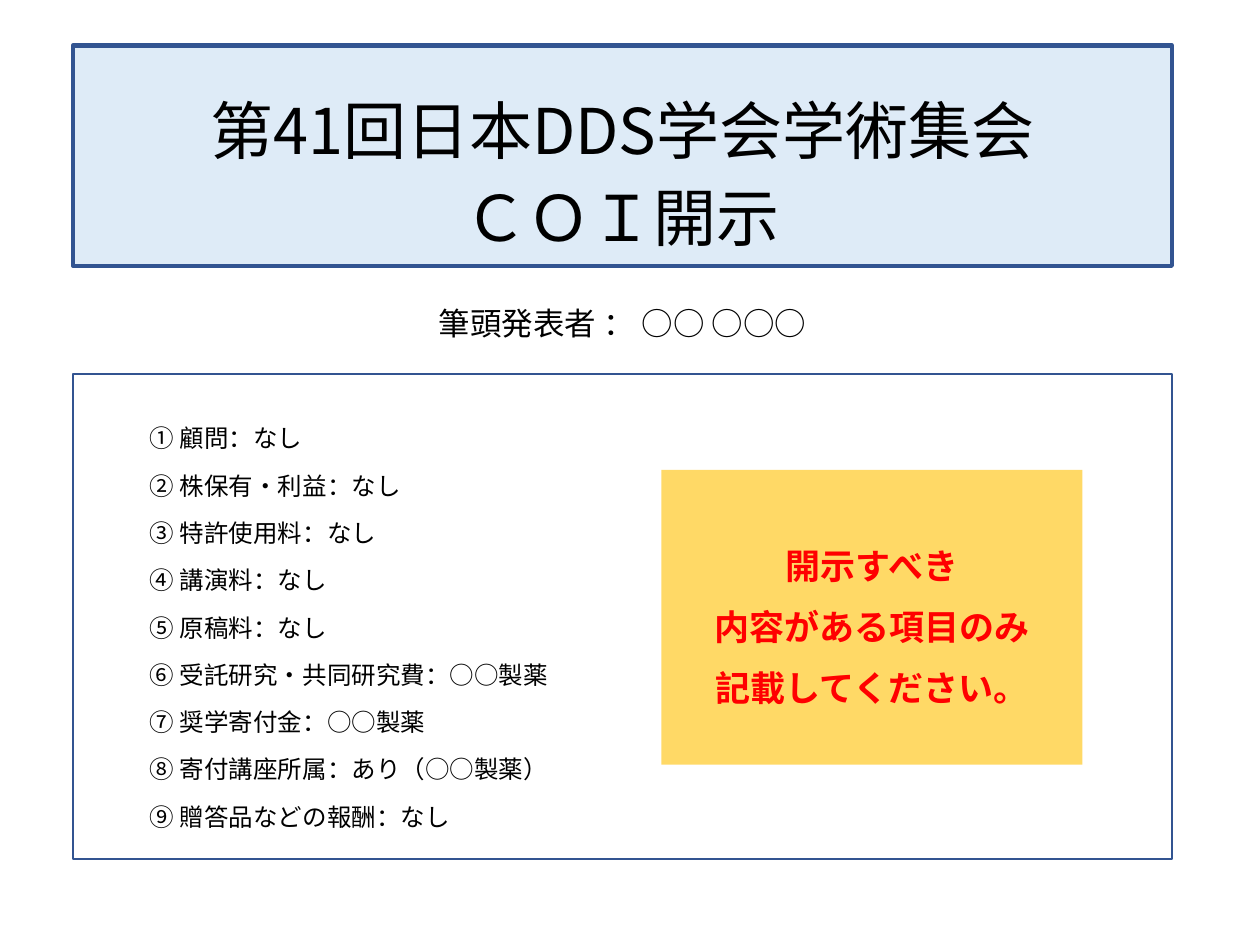
from lxml import etree
from pptx import Presentation
from pptx.dml.color import RGBColor
from pptx.enum.shapes import MSO_SHAPE
from pptx.enum.text import MSO_ANCHOR, MSO_AUTO_SIZE, PP_ALIGN
from pptx.oxml.ns import qn
from pptx.util import Inches, Pt

RECTANGLE = MSO_SHAPE.RECTANGLE
LEFT, CENTER = PP_ALIGN.LEFT, PP_ALIGN.CENTER
TOP, MIDDLE = MSO_ANCHOR.TOP, MSO_ANCHOR.MIDDLE
GROW = MSO_AUTO_SIZE.SHAPE_TO_FIT_TEXT

FONT = "Noto Sans CJK JP"
COLORS = {
    "text": "000000",
    "border": "325491",
    "banner": "DEEBF7",
    "notice": "FFD966",
    "warning": "FF0000",
}

# Shared column of the banner, the presenter line and the disclosure frame
MARGIN, CONTENT_WIDTH = 0.58, 8.72
NOTICE_LEFT, NOTICE_WIDTH = 5.25, 3.34

DISCLOSURES = [
    "① 顧問：なし",
    "② 株保有・利益：なし",
    "③ 特許使用料：なし",
    "④ 講演料：なし",
    "⑤ 原稿料：なし",
    "⑥ 受託研究・共同研究費：○○製薬",
    "⑦ 奨学寄付金：○○製薬",
    "⑧ 寄付講座所属：あり（○○製薬）",
    "⑨ 贈答品などの報酬：なし",
]
NOTICE = ["開示すべき", "内容がある項目のみ", "記載してください。"]


def color(name):
    return RGBColor.from_string(COLORS[name])


def add_box(slide, left, top, width, height, fill=None, line_width=None):
    box = slide.shapes.add_shape(
        RECTANGLE, Inches(left), Inches(top), Inches(width), Inches(height))
    box.shadow.inherit = False
    if fill:
        box.fill.solid()
        box.fill.fore_color.rgb = color(fill)
    else:
        box.fill.background()
    if line_width:
        box.line.color.rgb = color("border")
        box.line.width = Pt(line_width)
    else:
        box.line.fill.background()


def add_text(slide, lines, left, top, width, height, size, fill="text",
             bold=False, align=CENTER, anchor=MIDDLE, spacing=None):
    frame = slide.shapes.add_textbox(
        Inches(left), Inches(top), Inches(width), Inches(height)).text_frame
    frame.word_wrap = True
    frame.auto_size = GROW
    frame.vertical_anchor = anchor
    for index, line in enumerate(lines):
        paragraph = frame.add_paragraph() if index else frame.paragraphs[0]
        paragraph.alignment = align
        if spacing:
            paragraph.line_spacing = Pt(spacing)
        run = paragraph.add_run()
        run.text = line
        run.font.size = Pt(size)
        run.font.bold = bold
        run.font.color.rgb = color(fill)
        run.font.name = FONT
        # Japanese glyphs take the East Asian typeface
        etree.SubElement(run.font._element, qn("a:ea"), typeface=FONT)


def main():
    prs = Presentation()
    prs.slide_width, prs.slide_height = Inches(10), Inches(7.5)
    slide = prs.slides.add_slide(prs.slide_layouts[6])

    # Disclosure items
    add_text(slide, DISCLOSURES, 1.09, 3.17, 4.49, 3.47, 14,
             align=LEFT, anchor=TOP, spacing=27)

    # Presenter
    add_text(slide, ["筆頭発表者 ： ○○ ○○○"],
             MARGIN, 2.36, CONTENT_WIDTH, 0.4, 18)

    # Title banner
    add_box(slide, MARGIN, 0.36, CONTENT_WIDTH, 1.75, "banner", 2.5)
    for title, top in [("第41回日本DDS学会学術集会", 0.67), ("ＣＯＩ開示", 1.36)]:
        add_text(slide, [title], MARGIN, top, CONTENT_WIDTH, 0.71, 36)

    # Frame around the disclosures
    add_box(slide, MARGIN, 2.97, CONTENT_WIDTH, 3.85, line_width=1)

    # Notice
    add_box(slide, NOTICE_LEFT, 3.73, NOTICE_WIDTH, 2.34, "notice")
    add_text(slide, NOTICE, NOTICE_LEFT, 4.13, NOTICE_WIDTH, 1.53, 20,
             fill="warning", bold=True, spacing=35)

    prs.save("out.pptx")


if __name__ == "__main__":
    main()
